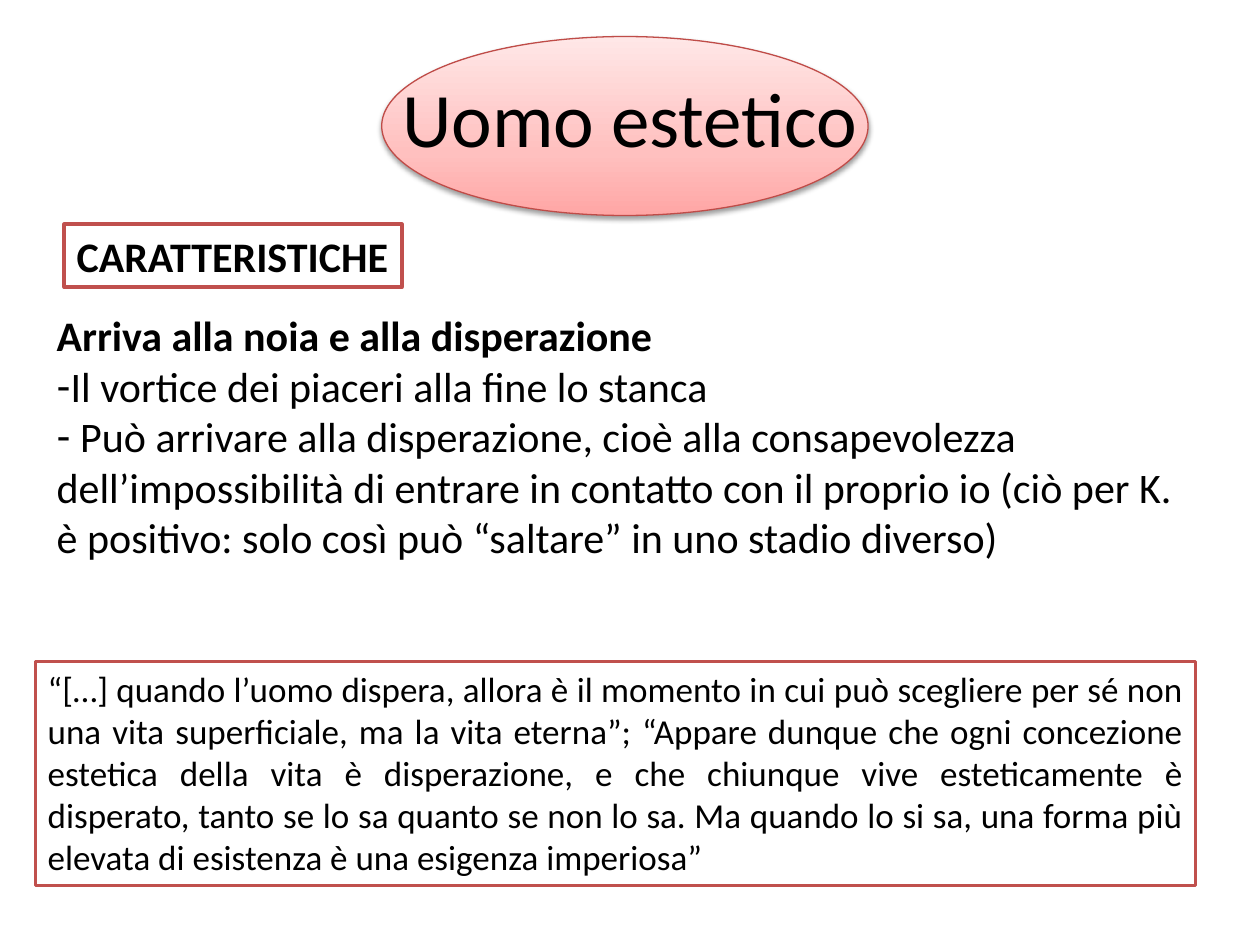
from copy import deepcopy

from lxml.etree import SubElement
from pptx import Presentation
from pptx.dml.color import RGBColor
from pptx.enum.shapes import MSO_SHAPE as SHAPE
from pptx.enum.text import MSO_ANCHOR as ANCHOR, MSO_AUTO_SIZE as AUTO, PP_ALIGN as ALIGN
from pptx.oxml.ns import qn
from pptx.util import Inches, Pt

COLORS = {"text": "000000", "paper": "FFFFFF", "border": "C0504D", "rim": "BF4C48",
          "deep": "FFA6A5", "mid": "FFC0BF", "pale": "FFE7E7"}
FONT = "Calibri"


def rgb(name):
    return RGBColor.from_string(COLORS[name])


class Deck:
    """Style and current slide, with a method for each kind of element."""

    def __init__(self, prs):
        self.slide = prs.slides.add_slide(prs.slide_layouts[1])

    def place(self, sp, box):
        sp.left, sp.top, sp.width, sp.height = map(Inches, box)

    def style(self, p, size, bold=False, align=ALIGN.LEFT):
        p.alignment = align
        p.space_before = Pt(0)
        for r in p.runs:
            r.font.name, r.font.size, r.font.bold = FONT, Pt(size), bold
            r.font.color.rgb = rgb("text")

    def title(self, text, box):
        sp = self.slide.shapes.title
        self.place(sp, box)
        tf = sp.text_frame
        tf.text = text
        tf.vertical_anchor = ANCHOR.MIDDLE
        self.style(tf.paragraphs[0], 44, align=ALIGN.CENTER)

    def ellipse(self, box, stops):
        sp = self.slide.shapes.add_shape(SHAPE.OVAL, *map(Inches, box))
        self.slide.shapes.title.element.addprevious(sp.element)
        sp.fill.gradient()
        sp.fill.gradient_angle = 90
        first = sp.element.find(".//" + qn("a:gs"))
        first.addnext(deepcopy(first))
        for stop, (position, color) in zip(sp.fill.gradient_stops, stops):
            stop.position = position
            stop.color.rgb = rgb(color)
        sp.line.color.rgb = rgb("rim")
        sp.line.width = Pt(0.75)
        sp.shadow.inherit = False
        effects = sp.element.spPr.find(qn("a:effectLst"))
        shadow = SubElement(effects, qn("a:outerShdw"), blurRad=str(Pt(3.1)),
                            dist=str(Pt(1.6)), dir="5400000", rotWithShape="0")
        color = SubElement(shadow, qn("a:srgbClr"), val=COLORS["text"])
        SubElement(color, qn("a:alpha"), val="38000")

    def framed_text(self, text, box, size, wrap=True, **kw):
        sp = self.slide.shapes.add_textbox(*map(Inches, box))
        sp.fill.solid()
        sp.fill.fore_color.rgb = rgb("paper")
        sp.line.color.rgb = rgb("border")
        sp.line.width = Pt(2)
        tf = sp.text_frame
        tf.word_wrap = wrap
        tf.auto_size = AUTO.SHAPE_TO_FIT_TEXT
        tf.text = text
        self.style(tf.paragraphs[0], size, **kw)

    def body(self, heading, items, box):
        sp = self.slide.placeholders[1]
        self.place(sp, box)
        tf = sp.text_frame
        tf.text = "\n".join([heading, *items])
        tf.auto_size = AUTO.SHAPE_TO_FIT_TEXT
        for i, p in enumerate(tf.paragraphs):
            pPr = p._p.get_or_add_pPr()
            pPr.set("marL", "0")
            pPr.set("indent", "0")
            if i:
                SubElement(pPr, qn("a:buFontTx"))
                SubElement(pPr, qn("a:buChar"), char="-")
            else:
                SubElement(pPr, qn("a:buNone"))
            self.style(p, 24, bold=i == 0)


def main():
    prs = Presentation()
    prs.slide_width, prs.slide_height = Inches(10), Inches(7.5)
    s = Deck(prs)
    s.ellipse((3.03, 0.29, 3.86, 1.42), [(0, "deep"), (0.35, "mid"), (1, "pale")])
    s.title("Uomo estetico", (0.5, 0.3, 9, 1.25))
    s.framed_text("CARATTERISTICHE", (0.51, 1.78, 2.68, 0.5), 24, wrap=False, bold=True)
    s.body("Arriva alla noia e alla disperazione", [
        "Il vortice dei piaceri alla fine lo stanca",
        " Può arrivare alla disperazione, cioè alla consapevolezza dell’impossibilità di "
        "entrare in contatto con il proprio io (ciò per K. è positivo: solo così può "
        "“saltare” in uno stadio diverso)",
    ], (0.35, 2.41, 9.21, 2.12))
    s.framed_text(
        "“[…] quando l’uomo dispera, allora è il momento in cui può scegliere per sé non una "
        "vita superficiale, ma la vita eterna”; “Appare dunque che ogni concezione estetica "
        "della vita è disperazione, e che chiunque vive esteticamente è disperato, tanto se lo "
        "sa quanto se non lo sa. Ma quando lo si sa, una forma più elevata di esistenza è una "
        "esigenza imperiosa”", (0.28, 5.25, 9.21, 1.78), 20, align=ALIGN.JUSTIFY)
    prs.save("out.pptx")


if __name__ == "__main__":
    main()
